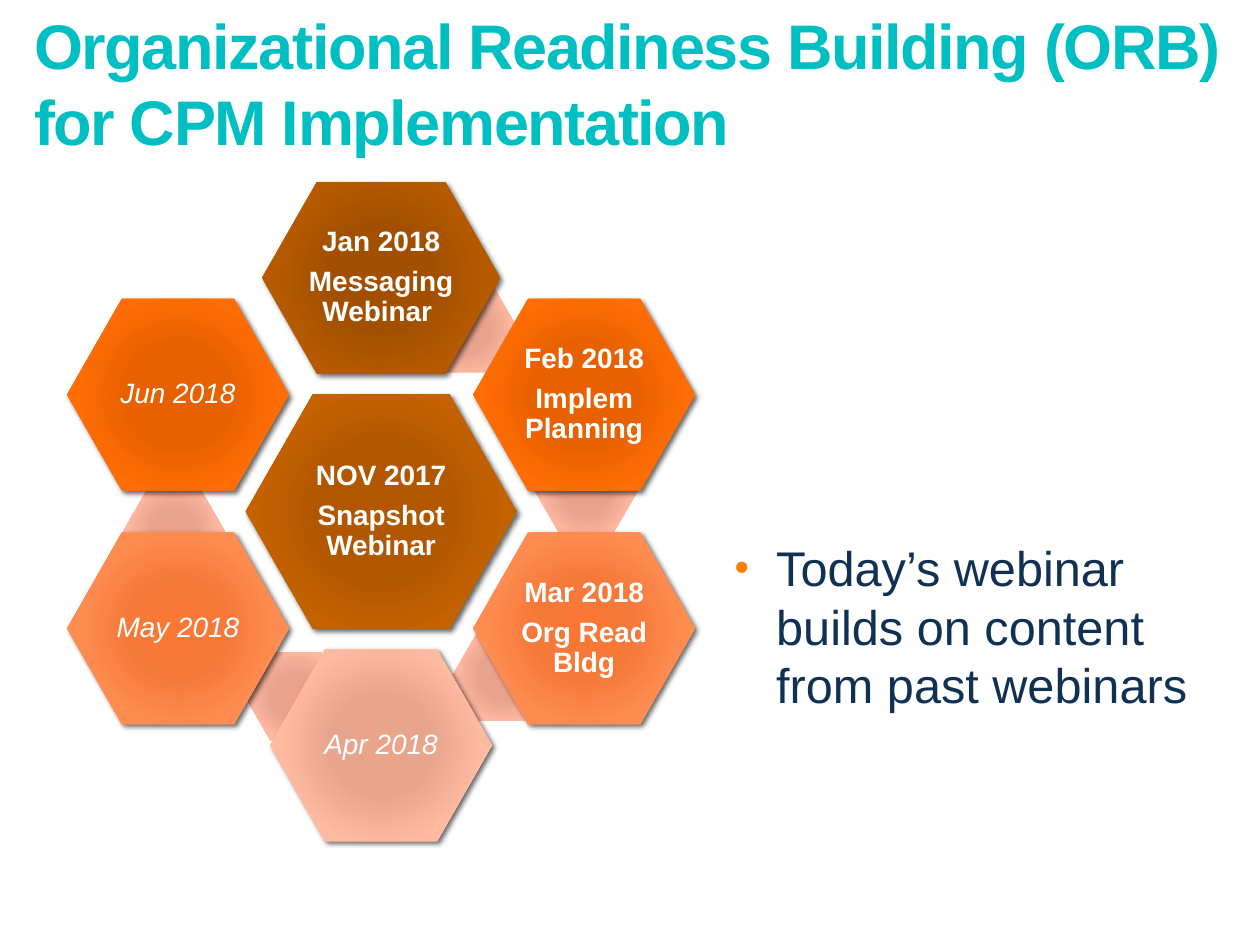
from lxml.etree import SubElement
from pptx import Presentation
from pptx.dml.color import RGBColor
from pptx.enum.shapes import MSO_SHAPE
from pptx.enum.text import MSO_ANCHOR, MSO_AUTO_SIZE, PP_ALIGN
from pptx.oxml import parse_xml
from pptx.oxml.ns import nsdecls, qn
from pptx.util import Inches, Pt

FONT = "Arial"
STOP_POSITIONS = (0, 34, 70, 100)
BROWN = ("B05700", "B05700", "C46100", "CC6601")
DARK_BROWN = ("A25000", "A25000", "B55A00", "BD5E01")
ORANGE = ("E86100", "E86100", "FF6D04", "FE7411")
LIGHT_ORANGE = ("FB7733", "F57A3A", "FF8D52", "FF9863")
PEACH = ("EAA48A", "E7A58E", "FFBAA1", "FFC8B4")
LINK_PEACH = ("EAA28A", "E7A38E", "FFB8A1", "FFC6B4")

# Columns and rows from the centre, size, gradient, text lines
MONTHS = [
    (0, -2, (1.89, 1.52), DARK_BROWN, ["Jan 2018", "Messaging Webinar "]),
    (1, -1, (1.76, 1.52), ORANGE, ["Feb 2018", "Implem Planning"]),
    (1, 1, (1.76, 1.52), LIGHT_ORANGE, ["Mar 2018", "Org Read Bldg"]),
    (0, 2, (1.76, 1.52), PEACH, ["Apr 2018"]),
    (-1, 1, (1.76, 1.52), LIGHT_ORANGE, ["May 2018"]),
    (-1, -1, (1.76, 1.52), ORANGE, ["Jun 2018"]),
]
# Columns and rows from the centre, one link between each month and the next
LINKS = [(0.42, -1.57), (1.01, -0.17), (0.6, 1.41), (-0.42, 1.58), (-1.02, 0.17)]


def rgb(value):
    return RGBColor.from_string(value)


def place(part, box):
    part.left, part.top, part.width, part.height = (Inches(length) for length in box)


def style_run(run, size, colour, bold=False, italic=False):
    font = run.font
    font.name, font.size, font.bold, font.italic = FONT, Pt(size), bold, italic
    font.color.rgb = rgb(colour)


def fill_radial(shape, colours):
    """Fill from the middle outwards, one colour per stop position."""
    stops = "".join(
        f'<a:gs pos="{position * 1000}"><a:srgbClr val="{colour}"/></a:gs>'
        for position, colour in zip(STOP_POSITIONS, colours))
    gradient = parse_xml(
        f'<a:gradFill {nsdecls("a")} rotWithShape="1"><a:gsLst>{stops}</a:gsLst>'
        '<a:path path="circle"><a:fillToRect l="100000" t="100000" r="100000" b="100000"/>'
        '</a:path></a:gradFill>')
    shape.fill.background()
    properties = shape._element.spPr
    properties.replace(properties.find(qn("a:noFill")), gradient)


def add_hexagon(slide, centre, size, colours, adjustment):
    (x, y), (width, height) = centre, size
    hexagon = slide.shapes.add_shape(
        MSO_SHAPE.HEXAGON, Inches(x - width / 2), Inches(y - height / 2),
        Inches(width), Inches(height))
    hexagon.adjustments[0] = adjustment
    fill_radial(hexagon, colours)
    hexagon.line.fill.background()
    hexagon.shadow.inherit = False
    return hexagon


def add_shadow(shape):
    effects = shape._element.spPr.find(qn("a:effectLst"))
    shadow = SubElement(effects, qn("a:outerShdw"), blurRad="38100", dist="25400",
                        dir="2700000", algn="tl", rotWithShape="0")
    colour = SubElement(shadow, qn("a:srgbClr"), val="000000")
    SubElement(colour, qn("a:alpha"), val="60000")


def add_month(slide, centre, size, colours, lines):
    """Add a shadowed hexagon; months without a topic are in italics."""
    month = add_hexagon(slide, centre, size, colours, 0.286)
    add_shadow(month)
    frame = month.text_frame
    frame.word_wrap = True
    frame.vertical_anchor = MSO_ANCHOR.MIDDLE
    frame.margin_left = frame.margin_right = Inches(0.02)
    frame.margin_top = frame.margin_bottom = Inches(0.02)
    has_topic = len(lines) > 1
    for index, line in enumerate(lines):
        paragraph = frame.add_paragraph() if index else frame.paragraphs[0]
        paragraph.alignment = PP_ALIGN.CENTER
        paragraph.line_spacing = 0.9
        paragraph.space_after = Pt(5.6)
        run = paragraph.add_run()
        run.text = line
        style_run(run, 16, "FFFFFF", bold=has_topic, italic=not has_topic)


def add_webinar_cycle(slide, box):
    """Draw the links first, so that every month lies over them."""
    left, top, width, height = box

    def grid_point(across, down):
        return (left + width * (0.5 + 0.323 * across),
                top + height * (0.5 + 0.177 * down))

    for across, down in LINKS:
        add_hexagon(slide, grid_point(across, down), (0.81, 0.7), LINK_PEACH, 0.289)
    add_month(slide, grid_point(0, 0), (2.15, 1.86), BROWN,
              ["NOV 2017", "Snapshot Webinar"])
    for across, down, size, colours, lines in MONTHS:
        add_month(slide, grid_point(across, down), size, colours, lines)


def fill_title(title, box):
    place(title, box)
    frame = title.text_frame
    frame.auto_size = MSO_AUTO_SIZE.NONE
    frame.vertical_anchor = MSO_ANCHOR.MIDDLE
    paragraph = frame.paragraphs[0]
    paragraph.alignment = PP_ALIGN.LEFT
    run = paragraph.add_run()
    run.text = "Organizational Readiness Building (ORB) for CPM Implementation"
    style_run(run, 36, "00BFC3", bold=True)
    run.font._element.set("spc", "-80")


def fill_message(message, box):
    place(message, box)
    frame = message.text_frame
    frame.auto_size = MSO_AUTO_SIZE.NONE
    paragraph = frame.paragraphs[0]
    paragraph.space_before, paragraph.space_after = Pt(0), Pt(18)
    properties = paragraph._p.get_or_add_pPr()
    properties.set("marL", str(Inches(0.33)))
    properties.set("indent", str(-Inches(0.33)))
    bullet_colour = SubElement(properties, qn("a:buClr"))
    SubElement(bullet_colour, qn("a:srgbClr"), val="FF7F01")
    SubElement(properties, qn("a:buSzPct"), val="85000")
    SubElement(properties, qn("a:buFont"), typeface=FONT)
    SubElement(properties, qn("a:buChar"), char="•")
    run = paragraph.add_run()
    run.text = "Today’s webinar builds on content from past webinars"
    style_run(run, 27.8, "103154")


def main():
    deck = Presentation()
    deck.slide_width, deck.slide_height = Inches(10), Inches(7.5)
    slide = deck.slides.add_slide(deck.slide_layouts[1])
    fill_title(slide.shapes.title, (0.17, 0.07, 9.97, 1.17))
    fill_message(slide.placeholders[1], (5.73, 4.22, 4.03, 1.95))
    add_webinar_cycle(slide, (0.53, 1.44, 4.99, 5.24))
    deck.save("out.pptx")


if __name__ == "__main__":
    main()
